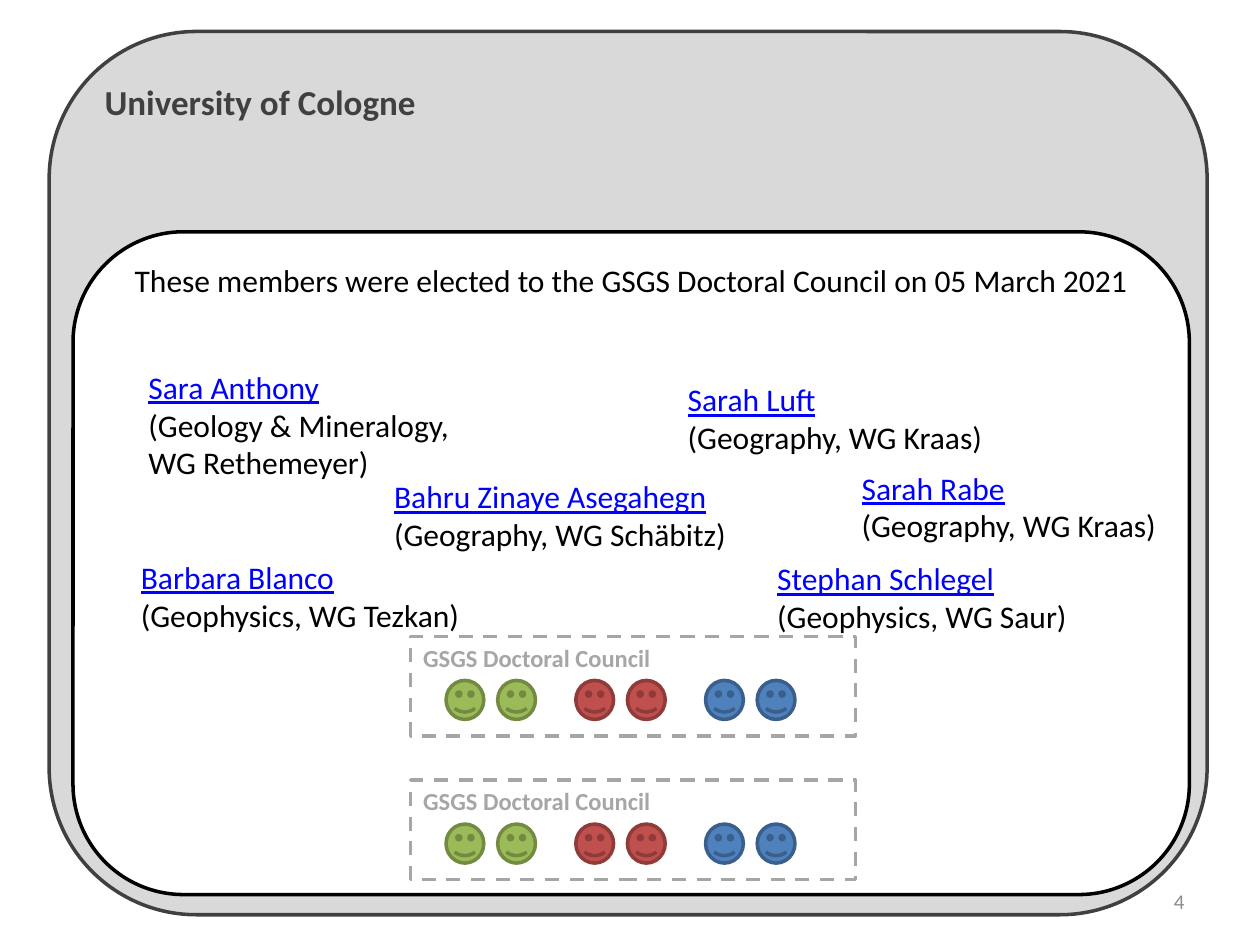
from pptx import Presentation
from pptx.dml.color import RGBColor
from pptx.enum.dml import MSO_LINE
from pptx.enum.shapes import MSO_SHAPE
from pptx.enum.text import MSO_ANCHOR, PP_ALIGN
from pptx.util import Inches, Pt

ROUND, RECT, SMILE = MSO_SHAPE.ROUNDED_RECTANGLE, MSO_SHAPE.RECTANGLE, MSO_SHAPE.SMILEY_FACE
DASH = MSO_LINE.DASH
TOP, MID = MSO_ANCHOR.TOP, MSO_ANCHOR.MIDDLE
LEFT, RIGHT = PP_ALIGN.LEFT, PP_ALIGN.RIGHT

WIDE, HIGH = Inches(10), Inches(7.5)
COLS, ROWS = 100, 75

HUES = {
    "white": "FFFFFF", "black": "000000", "panel": "D9D9D9", "dark": "404040",
    "mute": "A6A6A6", "page": "8C8C8C", "link": "0000FF",
    "green": "9BBB59", "moss": "738A42",
    "red": "C0504D", "wine": "8E3B39",
    "blue": "4F81BD", "navy": "3A5F8C",
}
TEAMS = [("green", "moss"), ("red", "wine"), ("blue", "navy")]
PEOPLE = [
    ((10.8, 28.7, 30.7, 11.9), "Sara Anthony", ["(Geology & Mineralogy,", "WG Rethemeyer)"]),
    ((53.6, 29.7, 26, 7.1), "Sarah Luft", ["(Geography, WG Kraas)"]),
    ((67.4, 36.7, 30.7, 7.1), "Sarah Rabe", ["(Geography, WG Kraas)"]),
    ((30.3, 37.4, 30.7, 7.1), "Bahru Zinaye Asegahegn", ["(Geography, WG Schäbitz)"]),
    ((10.2, 43.8, 29.7, 8.9), "Barbara Blanco", ["(Geophysics, WG Tezkan)"]),
    ((60.7, 43.9, 29.7, 8.9), "Stephan Schlegel", ["(Geophysics, WG Saur)"]),
]


def grid(box):
    x, y, w, h = box
    return [round(v) for v in (x * WIDE / COLS, y * HIGH / ROWS, w * WIDE / COLS, h * HIGH / ROWS)]


def tint(hue):
    return RGBColor.from_string(HUES[hue])


def apply(item, form):
    for name, value in form.items():
        setattr(item, name, value)


def write(para, text, size, hue, **form):
    run = para.add_run()
    run.text = text
    apply(run.font, {"name": "Calibri", "size": Pt(size), **form})
    run.font.color.rgb = tint(hue)


def draw(home, kind, box, fill, edge):
    shape = home.shapes.add_shape(kind, *grid(box))
    shape.shadow.inherit = False
    shape.fill.solid()
    shape.fill.fore_color.rgb = tint(fill)
    shape.line.color.rgb = tint(edge)
    shape.line.width = Pt(2)
    return shape


def label(slide, box, **form):
    frame = slide.shapes.add_textbox(*grid(box)).text_frame
    apply(frame, {"word_wrap": True, **form})
    return frame.paragraphs[0]


def header(slide, box):
    x, y, w, h = box
    draw(slide, ROUND, box, "panel", "dark")
    title = slide.shapes.title
    title.element.getparent().append(title.element)
    spot = grid((x + 3.4, y + 3.4, w - 6.8, 5))
    apply(title, dict(zip(("left", "top", "width", "height"), spot)))
    apply(title.text_frame, {"vertical_anchor": TOP, "word_wrap": True})
    para = title.text_frame.paragraphs[0]
    para.alignment = LEFT
    write(para, "University of Cologne", 20, "dark", bold=True)


def council(slide, box):
    x, y, w, h = box
    group = slide.shapes.add_group_shape()
    frame = draw(group, RECT, box, "white", "mute")
    frame.line.dash_style = DASH
    apply(frame.text_frame, {"vertical_anchor": TOP, "word_wrap": True})
    para = frame.text_frame.paragraphs[0]
    para.alignment = LEFT
    write(para, "GSGS Doctoral Council", 14, "mute", bold=True)
    for team, (fill, edge) in enumerate(TEAMS):
        for seat in range(2):
            left = x + 2.8 + 10.3 * team + 4.1 * seat
            draw(group, SMILE, (left, y + 3.5, 3, 3.1), fill, edge)


def member(slide, box, name, lines):
    para = label(slide, box)
    write(para, name, 18, "link", underline=True)
    for line in lines:
        para.add_line_break()
        write(para, line, 18, "black")


def number(slide, box):
    para = label(slide, box, vertical_anchor=MID)
    para.alignment = RIGHT
    write(para, "4", 12, "page")


def main():
    deck = Presentation()
    deck.slide_width, deck.slide_height = WIDE, HIGH
    slide = deck.slides.add_slide(deck.slide_layouts[5])
    header(slide, (3.9, 2.5, 91.9, 70.1))
    draw(slide, ROUND, (5.8, 18.4, 88.6, 52.6), "white", "black")
    for top in (50.5, 61.9):
        council(slide, (32.6, top, 35.3, 7.9))
    number(slide, (71.7, 69.5, 23.3, 4))
    intro = label(slide, (9.7, 20.2, 81.2, 4), word_wrap=False)
    write(intro, "These members were elected to the GSGS Doctoral Council on 05 March 2021", 18, "black")
    for person in PEOPLE:
        member(slide, *person)
    deck.save("out.pptx")


if __name__ == "__main__":
    main()
